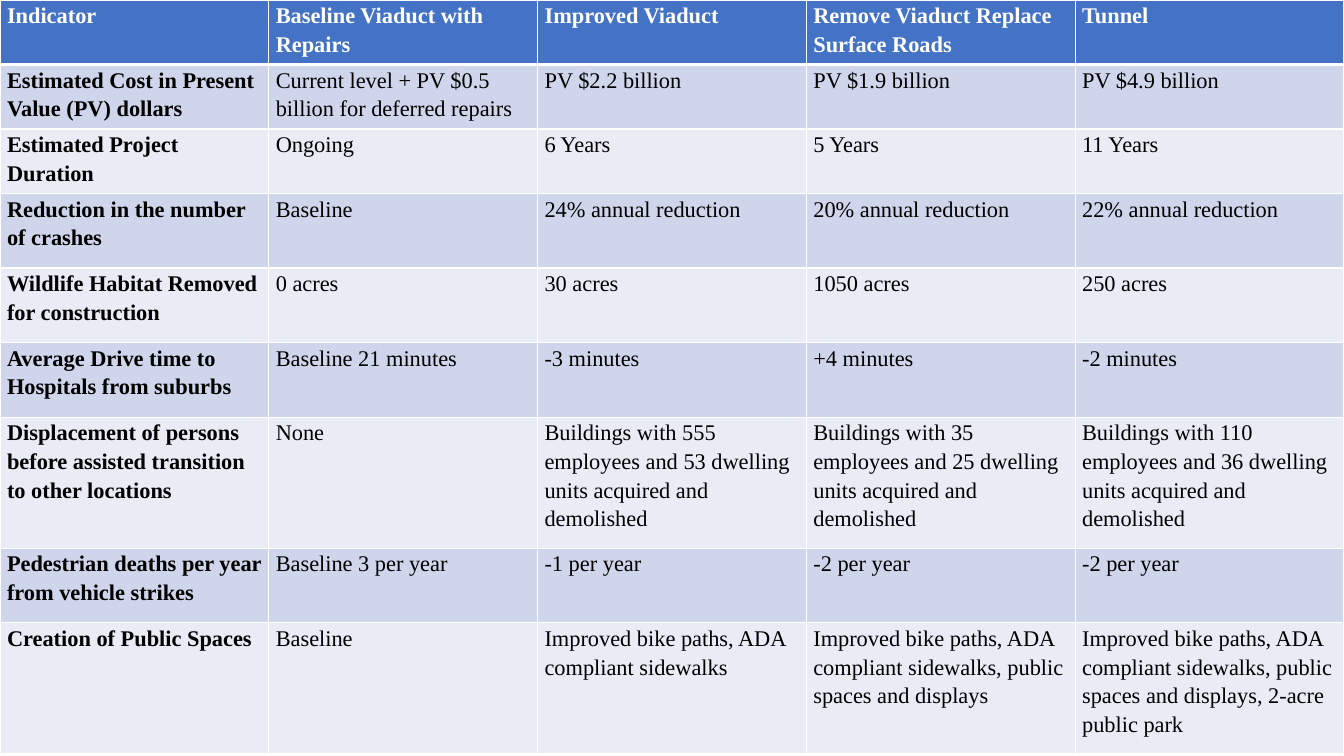
from lxml import etree
from pptx import Presentation
from pptx.dml.color import RGBColor
from pptx.oxml.ns import qn
from pptx.util import Inches, Pt

FONT = "Times New Roman"
WHITE, BLACK, BLUE = "FFFFFF", "000000", "4472C4"
BANDS = ["E9EBF5", "CFD5EA"]
WIDTH = 13.33
HEIGHTS = [0.64] * 3 + [0.74] * 3 + [1.3, 0.74, 1.3]
ROWS = [
    ["Indicator", "Baseline Viaduct with Repairs", "Improved Viaduct",
     "Remove Viaduct Replace Surface Roads", "Tunnel"],
    ["Estimated Cost in Present Value (PV) dollars",
     "Current level + PV $0.5 billion for deferred repairs",
     "PV $2.2 billion", "PV $1.9 billion", "PV $4.9 billion"],
    ["Estimated Project Duration", "Ongoing", "6 Years", "5 Years", "11 Years"],
    ["Reduction in the number of crashes", "Baseline", "24% annual reduction",
     "20% annual reduction", "22% annual reduction"],
    ["Wildlife Habitat Removed for construction", "0 acres", "30 acres",
     "1050 acres", "250 acres"],
    ["Average Drive time to Hospitals from suburbs", "Baseline 21 minutes",
     "-3 minutes", "+4 minutes", "-2 minutes"],
    ["Displacement of persons before assisted transition to other locations",
     "None",
     "Buildings with 555 employees and 53 dwelling units acquired and demolished",
     "Buildings with 35 employees and 25 dwelling units acquired and demolished",
     "Buildings with 110 employees and 36 dwelling units acquired and demolished"],
    ["Pedestrian deaths per year from vehicle strikes", "Baseline 3 per year",
     "-1 per year", "-2 per year", "-2 per year"],
    ["Creation of Public Spaces", "Baseline",
     "Improved bike paths, ADA compliant sidewalks",
     "Improved bike paths, ADA compliant sidewalks, public spaces and displays",
     "Improved bike paths, ADA compliant sidewalks, public spaces and displays, "
     "2-acre public park"],
]


def paint(color, value):
    color.rgb = RGBColor.from_string(value)


def write(cell, text, size=16, bold=False, color=BLACK):
    cell.margin_left = cell.margin_right = Inches(0.07)
    cell.margin_top = cell.margin_bottom = 0
    para = cell.text_frame.paragraphs[0]
    para.line_spacing = 1.15
    run = para.add_run()
    run.text = text
    run.font.name = FONT
    run.font.size = Pt(size)
    run.font.bold = bold
    paint(run.font.color, color)


deck = Presentation()
deck.slide_width, deck.slide_height = Inches(WIDTH), Inches(7.5)
slide = deck.slides.add_slide(deck.slide_layouts[6])
frame = slide.shapes.add_table(len(ROWS), len(ROWS[0]), 0, 0,
                               Inches(WIDTH), Inches(sum(HEIGHTS)))
table = frame.table
for col in table.columns:
    col.width = Inches(WIDTH / len(ROWS[0]))

for i, (height, row) in enumerate(zip(HEIGHTS, ROWS)):
    table.rows[i].height = Inches(height)
    head = i == 0
    for j, text in enumerate(row):
        cell = table.cell(i, j)
        write(cell, text, bold=head or j == 0, color=WHITE if head else BLACK)
        props = cell._tc.get_or_add_tcPr()
        for side in ["L", "R", "T", "B"]:
            thick = (i, side) in [(0, "B"), (1, "T")]
            line = etree.SubElement(props, qn("a:ln" + side),
                                    w=str(Pt(3 if thick else 1)))
            fill = etree.SubElement(line, qn("a:solidFill"))
            etree.SubElement(fill, qn("a:srgbClr"), val=WHITE)
        cell.fill.solid()
        paint(cell.fill.fore_color, BLUE if head else BANDS[i % 2])

deck.save("out.pptx")
